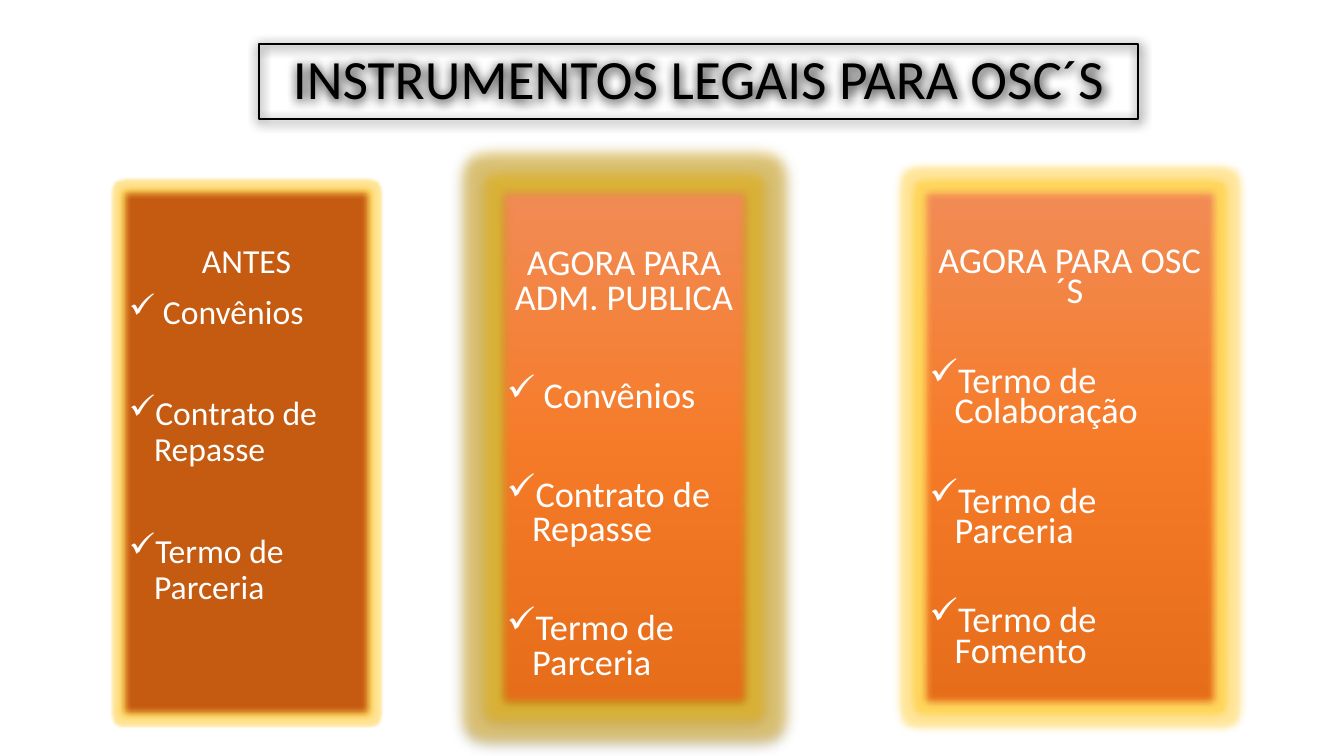
from lxml import etree
from pptx import Presentation
from pptx.dml.color import RGBColor
from pptx.enum.shapes import MSO_SHAPE
from pptx.enum.text import MSO_ANCHOR, PP_ALIGN
from pptx.oxml.ns import qn
from pptx.util import Inches, Pt

HUES = {"ink": "000000", "white": "FFFFFF", "rust": "C55A11",
        "edge": "ED7D31", "gold": "FFC000",
        "top": "F18C57", "mid": "F67B28", "base": "E56C19"}
FONT = "Calibri"
GAP = 10


def add(parent, tag, **attrs):
    node = etree.SubElement(parent, qn(tag))
    for key, value in attrs.items():
        node.set(key, str(value))
    return node


def tint(parent, hue, alpha=100):
    color = add(parent, "a:srgbClr", val=HUES[hue])
    if alpha < 100:
        add(color, "a:alpha", val=alpha * 1000)


def frame(slide, box, edge, width):
    shape = slide.shapes.add_shape(MSO_SHAPE.RECTANGLE, *map(Inches, box))
    shape.shadow.inherit = False
    shape.line.color.rgb = RGBColor.from_string(HUES[edge])
    shape.line.width = Pt(width)
    shape.text_frame.word_wrap = True
    return shape


def effects(shape, glow=0, shadow=None, soft=0):
    """Add glow, shadow (alpha, blur, distance) and soft edge, in points."""
    group = shape._element.spPr.find(qn("a:effectLst"))
    if glow:
        tint(add(group, "a:glow", rad=Pt(glow)), "gold", 40)
    if shadow:
        alpha, blur, dist = shadow
        node = add(group, "a:outerShdw", blurRad=Pt(blur), dist=Pt(dist),
                   dir=5400000, algn="ctr", rotWithShape=0)
        tint(node, "ink", alpha)
    if soft:
        add(group, "a:softEdge", rad=Pt(soft))


def shade(shape):
    """Fill from light at the top to dark at the bottom."""
    shape.fill.gradient()
    shape.fill.gradient_angle = 270
    stops = shape._element.spPr.find(qn("a:gradFill")).find(qn("a:gsLst"))
    for stop in list(stops):
        stops.remove(stop)
    for pos, hue in ((0, "top"), (50, "mid"), (100, "base")):
        tint(add(stops, "a:gs", pos=pos * 1000), hue)


def style(para, size, hue, space):
    para.line_spacing = space
    for run in para.runs:
        run.font.size = Pt(size)
        run.font.name = FONT
        run.font.color.rgb = RGBColor.from_string(HUES[hue])


def title(slide, box, text):
    shape = frame(slide, box, "ink", 1.5)
    shape.fill.background()
    effects(shape, shadow=(100, 8.5, 1))
    shape.text_frame.vertical_anchor = MSO_ANCHOR.MIDDLE
    para = shape.text_frame.paragraphs[0]
    para.text = text
    para.alignment = PP_ALIGN.CENTER
    style(para, 39.6, "ink", 0.9)


def panel(slide, box, head, items, size, space, inset, glow,
          edge="edge", width=0.5, solid=None, shadow=None, first=None):
    shape = frame(slide, box, edge, width)
    if solid:
        shape.fill.solid()
        shape.fill.fore_color.rgb = RGBColor.from_string(HUES[solid])
    else:
        shade(shape)
    effects(shape, glow, shadow, soft=5)
    text = shape.text_frame
    text.vertical_anchor = MSO_ANCHOR.TOP
    text.margin_top = Inches(inset)
    para = text.paragraphs[0]
    para.text = head
    para.alignment = PP_ALIGN.CENTER
    style(para, size, "white", space)
    wide = round(2 * GAP + size * 1.22 * space, 1)
    for index, item in enumerate(items):
        para = text.add_paragraph()
        para.text = item
        para.alignment = PP_ALIGN.LEFT
        para.space_before = Pt(first if first and index == 0 else wide)
        props = para._p.get_or_add_pPr()
        props.set("marL", str(Inches(0.25)))
        props.set("indent", str(Inches(-0.25)))
        add(props, "a:buFont", typeface="OpenSymbol")
        add(props, "a:buChar", char="✓")
        style(para, size, "white", space)


def main():
    deck = Presentation()
    deck.slide_width, deck.slide_height = Inches(13.33), Inches(7.5)
    slide = deck.slides.add_slide(deck.slide_layouts[6])
    title(slide, (2.57, 0.44, 8.72, 0.74), "INSTRUMENTOS LEGAIS PARA OSC´S")
    old = [" Convênios", "Contrato de Repasse", "Termo de Parceria"]
    new = ["Termo de Colaboração", "Termo de Parceria", "Termo de Fomento"]
    panel(slide, (1.18, 1.85, 2.53, 5.28), "ANTES", old, 24, 0.9, 0.58, 4,
          solid="rust", first=GAP)
    panel(slide, (9.12, 1.85, 2.98, 5.17), "AGORA PARA OSC´S", new,
          25.9, 0.7, 0.62, 11)
    panel(slide, (4.93, 1.85, 2.52, 5.17), "AGORA PARA ADM. PUBLICA", old,
          25.9, 0.8, 0.61, 18, edge="gold", width=0.75,
          shadow=(63, 4.5, 1.5))
    deck.save("out.pptx")


if __name__ == "__main__":
    main()
